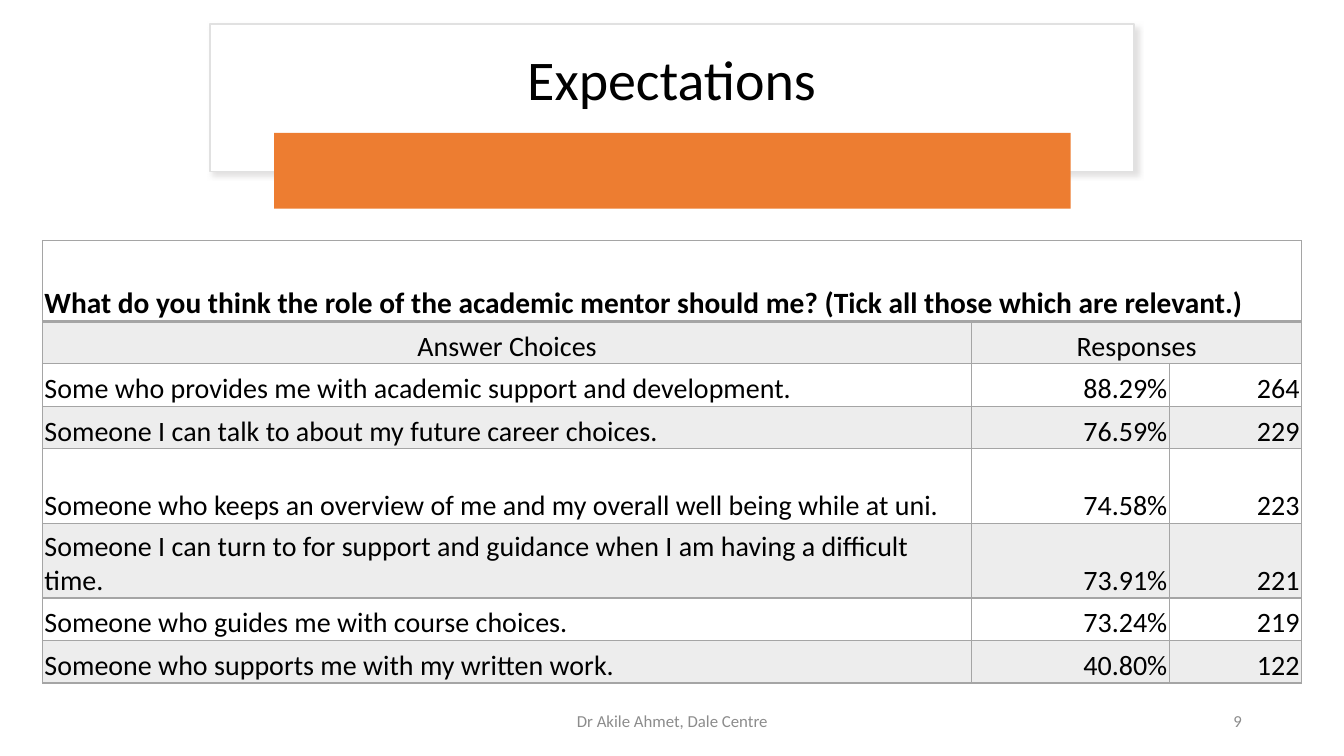
import pptx
import pptx.util
import pptx.dml.color
import pptx.enum.shapes
import pptx.enum.text
import pptx.oxml
import pptx.oxml.ns
from dataclasses import dataclass

Cm = pptx.util.Cm
Pt = pptx.util.Pt
ALIGN = pptx.enum.text.PP_ALIGN
ANCHOR = pptx.enum.text.MSO_ANCHOR
SHAPE = pptx.enum.shapes.MSO_SHAPE
Color = pptx.dml.color.RGBColor.from_string
NAMESPACE = pptx.oxml.ns.nsdecls("a")


@dataclass(frozen=True)
class Theme:
    font: str = "Calibri"
    ink: str = "000000"
    paper: str = "FFFFFF"
    frame: str = "E1E1E1"
    shadow: str = "C5C3C3"
    accent: str = "ED7D31"
    grid: str = "A5A5A5"
    band: str = "EDEDED"
    muted: str = "8C8C8C"
    title_size: int = 40
    question_size: int = 21
    body_size: int = 20
    footer_size: int = 12


theme = Theme()


def write(frame, text, size, color, align, anchor):
    """Put one styled paragraph in a text frame and return it."""
    frame.word_wrap = True
    frame.vertical_anchor = anchor
    para = frame.paragraphs[0]
    para.text = text
    para.alignment = align
    para.font.name = theme.font
    para.font.size = Pt(size)
    para.font.color.rgb = Color(color)
    return para


deck = pptx.Presentation()
deck.slide_width, deck.slide_height = Cm(33.87), Cm(19.05)
page = deck.slides.add_slide(deck.slide_layouts[6])

# Title card with its accent bar
card = page.shapes.add_shape(SHAPE.RECTANGLE, Cm(5.29), Cm(0.61), Cm(23.29), Cm(3.71))
card.fill.solid()
card.fill.fore_color.rgb = Color(theme.paper)
card.line.color.rgb = Color(theme.frame)
card.line.width = Pt(1)
card.shadow.inherit = False
effects = card._element.spPr.find(pptx.oxml.ns.qn("a:effectLst"))
effects.append(pptx.oxml.parse_xml(
    f'<a:outerShdw {NAMESPACE} blurRad="{Pt(4)}" dist="{Pt(3)}" dir="2700000" algn="tl" rotWithShape="0">'
    f'<a:srgbClr val="{theme.shadow}"><a:alpha val="50000"/></a:srgbClr></a:outerShdw>'))

title = page.shapes.add_textbox(Cm(5.84), Cm(0.86), Cm(22.17), Cm(2.41))
heading = write(title.text_frame, "Expectations", theme.title_size, theme.ink, ALIGN.CENTER, ANCHOR.MIDDLE)
heading.line_spacing = 0.9

bar = page.shapes.add_shape(SHAPE.ROUNDED_RECTANGLE, Cm(6.91), Cm(3.35), Cm(20.07), Cm(1.91))
bar.adjustments[0] = 0
bar.fill.solid()
bar.fill.fore_color.rgb = Color(theme.accent)
bar.line.fill.background()
bar.shadow.inherit = False

# Survey table
survey = [
    ("What do you think the role of the academic mentor should me? (Tick all those which are relevant.)", "", ""),
    ("Answer Choices", "Responses", ""),
    ("Some who provides me with academic support and development.", "88.29%", "264"),
    ("Someone I can talk to about my future career choices.", "76.59%", "229"),
    ("Someone who keeps an overview of me and my overall well being while at uni.", "74.58%", "223"),
    ("Someone I can turn to for support and guidance when I am having a difficult time.", "73.91%", "221"),
    ("Someone who guides me with course choices.", "73.24%", "219"),
    ("Someone who supports me with my written work.", "40.80%", "122"),
]
column_widths = [23.42, 4.98, 3.33]
row_heights = [2.03, 1.07, 1.07, 1.07, 1.88, 1.88, 1.07, 1.07]

table = page.shapes.add_table(
    len(survey), len(column_widths), Cm(1.07), Cm(6.07),
    Cm(sum(column_widths)), Cm(sum(row_heights))).table
for column, width in zip(table.columns, column_widths):
    column.width = Cm(width)
for row, height in zip(table.rows, row_heights):
    row.height = Cm(height)
table.cell(0, 0).merge(table.cell(0, 2))
table.cell(1, 1).merge(table.cell(1, 2))

for row_index, values in enumerate(survey):
    for column_index, value in enumerate(values):
        cell = table.cell(row_index, column_index)
        cell.margin_left = cell.margin_right = cell.margin_top = Cm(0.05)
        cell.margin_bottom = 0
        cell.vertical_anchor = ANCHOR.BOTTOM
        cell.fill.solid()
        cell.fill.fore_color.rgb = Color(theme.band if row_index % 2 else theme.paper)

        if row_index == 1:
            align = ALIGN.CENTER
        else:
            align = ALIGN.RIGHT if column_index else ALIGN.LEFT
        size = theme.body_size if row_index else theme.question_size
        para = write(cell.text_frame, value, size, theme.ink, align, ANCHOR.BOTTOM)
        para.font.bold = row_index == 0

        for position, side in enumerate("LRTB"):
            under_question = (row_index, side) in [(0, "B"), (1, "T")]
            cell._tc.tcPr.insert(position, pptx.oxml.parse_xml(
                f'<a:ln{side} {NAMESPACE} w="{Pt(2 if under_question else 1)}"><a:solidFill>'
                f'<a:srgbClr val="{theme.grid}"/></a:solidFill></a:ln{side}>'))

# Footer
for text, left, width, align in [
    ("Dr Akile Ahmet, Dale Centre", 11.23, 11.43, ALIGN.CENTER),
    ("9", 23.93, 7.62, ALIGN.RIGHT),
]:
    box = page.shapes.add_textbox(Cm(left), Cm(17.65), Cm(width), Cm(1.02))
    write(box.text_frame, text, theme.footer_size, theme.muted, align, ANCHOR.MIDDLE)

deck.save("out.pptx")
